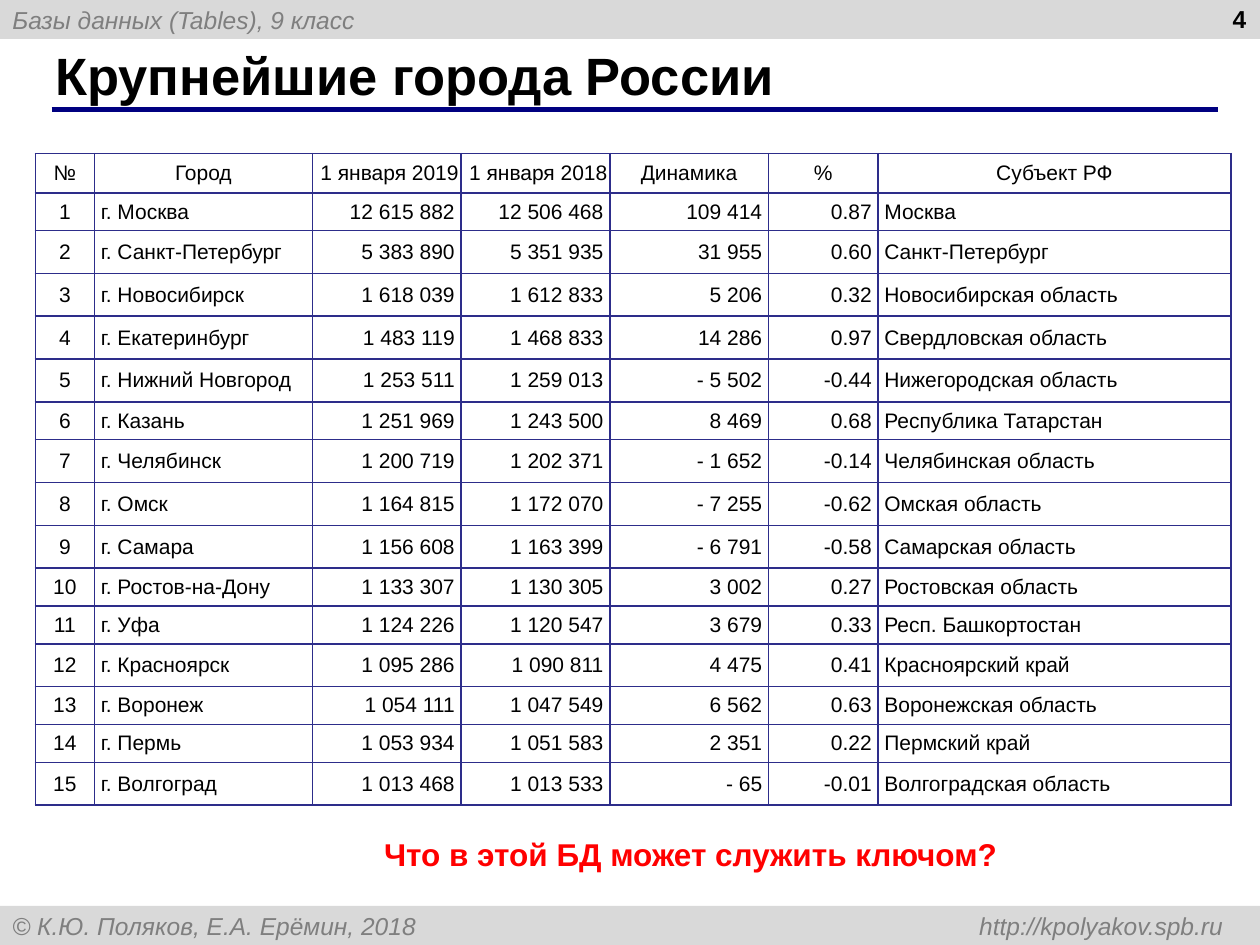
from lxml import etree
from pptx import Presentation
from pptx.dml.color import RGBColor
from pptx.enum.shapes import MSO_CONNECTOR, MSO_SHAPE
from pptx.enum.text import MSO_ANCHOR, PP_ALIGN
from pptx.oxml.ns import qn
from pptx.util import Inches, Pt

LEFT, CENTER, RIGHT = PP_ALIGN.LEFT, PP_ALIGN.CENTER, PP_ALIGN.RIGHT
TOP, MIDDLE = MSO_ANCHOR.TOP, MSO_ANCHOR.MIDDLE
RECTANGLE, STRAIGHT = MSO_SHAPE.RECTANGLE, MSO_CONNECTOR.STRAIGHT

FONT = "Arial"
BLACK, RED, NAVY = "000000", "FF0000", "000080"
BAND_FILL, BAND_TEXT, GRID = "D9D9D9", "7F7F7F", "2D2D8A"

COLUMN_WIDTHS = [0.47, 1.73, 1.18, 1.18, 1.26, 0.87, 2.8]
COLUMN_ALIGNMENTS = [CENTER, LEFT, RIGHT, RIGHT, RIGHT, RIGHT, LEFT]
HEADER_HEIGHT, SHORT_HEIGHT, TALL_HEIGHT = 0.31, 0.28, 0.34
SHORT_ROWS = {1, 6, 10, 11, 13, 14}
HEADERS = ["№", "Город", " 1 января 2019", " 1 января 2018 ", "Динамика", "%",
           "Субъект РФ"]
CITIES = [
    ["г. Москва", "12 615 882", "12 506 468", "109 414", "0.87", "Москва"],
    ["г. Санкт-Петербург", "5 383 890", "5 351 935", "31 955", "0.60", "Санкт-Петербург"],
    ["г. Новосибирск", "1 618 039", "1 612 833", "5 206", "0.32", "Новосибирская область"],
    ["г. Екатеринбург", "1 483 119", "1 468 833", "14 286", "0.97", "Свердловская область"],
    ["г. Нижний Новгород", "1 253 511", "1 259 013", "- 5 502", "-0.44",
     "Нижегородская область"],
    ["г. Казань", "1 251 969", "1 243 500", "8 469", "0.68", "Республика Татарстан"],
    ["г. Челябинск", "1 200 719", "1 202 371", "- 1 652", "-0.14", "Челябинская область"],
    ["г. Омск", "1 164 815", "1 172 070", "- 7 255", "-0.62", "Омская область"],
    ["г. Самара", "1 156 608", "1 163 399", "- 6 791", "-0.58", "Самарская область"],
    ["г. Ростов-на-Дону", "1 133 307", "1 130 305", "3 002", "0.27", "Ростовская область"],
    ["г. Уфа", "1 124 226", "1 120 547", "3 679", "0.33", "Респ. Башкортостан"],
    ["г. Красноярск", "1 095 286", "1 090 811", "4 475", "0.41", "Красноярский край"],
    ["г. Воронеж", "1 054 111", "1 047 549", "6 562", "0.63", "Воронежская область"],
    ["г. Пермь", "1 053 934", "1 051 583", "2 351", "0.22", "Пермский край"],
    ["г. Волгоград", "1 013 468", "1 013 533", "- 65", "-0.01", "Волгоградская область"],
]


def color(hex_value):
    return RGBColor.from_string(hex_value)


def write(text_frame, text, size, hex_value, bold=False, italic=False, align=LEFT):
    text_frame.text = text
    paragraph = text_frame.paragraphs[0]
    paragraph.alignment = align
    for run in paragraph.runs:
        font = run.font
        font.name, font.size = FONT, Pt(size)
        font.bold, font.italic = bold, italic
        font.color.rgb = color(hex_value)


def add_text(slide, box, text, size, hex_value, align=LEFT, anchor=TOP):
    shape = slide.shapes.add_textbox(*map(Inches, box))
    shape.text_frame.word_wrap = True
    shape.text_frame.vertical_anchor = anchor
    write(shape.text_frame, text, size, hex_value, bold=True, align=align)


def add_band(slide, box, text, tab=None):
    """Grey strip with an italic caption and an optional right tab stop."""
    shape = slide.shapes.add_shape(RECTANGLE, *map(Inches, box))
    shape.shadow.inherit = False
    shape.fill.solid()
    shape.fill.fore_color.rgb = color(BAND_FILL)
    shape.line.fill.background()
    shape.text_frame.vertical_anchor = MIDDLE
    write(shape.text_frame, text, 14, BAND_TEXT, italic=True)
    if tab:
        properties = shape.text_frame.paragraphs[0]._p.get_or_add_pPr()
        tabs = etree.SubElement(properties, qn("a:tabLst"))
        etree.SubElement(tabs, qn("a:tab"), pos=str(Inches(tab)), algn="r")


def add_heading(slide, box, text):
    """Slide title with the thick rule below it."""
    add_text(slide, box, text, 30, BLACK, anchor=MIDDLE)
    left, top, width, height = box
    rule_left, rule_top = left + 0.07, top + height + 0.02
    rule = slide.shapes.add_connector(
        STRAIGHT, Inches(rule_left), Inches(rule_top),
        Inches(rule_left + width + 0.1), Inches(rule_top))
    rule.line.color.rgb = color(NAVY)
    rule.line.width = Pt(3)
    etree.SubElement(rule._element.spPr, qn("a:effectLst"))


def add_borders(cell):
    properties = cell._tc.get_or_add_tcPr()
    for position, side in enumerate(("a:lnL", "a:lnR", "a:lnT", "a:lnB")):
        line = etree.Element(qn(side), w=str(Pt(1)))
        fill = etree.SubElement(line, qn("a:solidFill"))
        etree.SubElement(fill, qn("a:srgbClr"), val=GRID)
        properties.insert(position, line)


def add_city_table(slide, box):
    rows = [HEADERS] + [[str(number), *city] for number, city in enumerate(CITIES, 1)]
    table = slide.shapes.add_table(len(rows), len(HEADERS), *map(Inches, box)).table
    table.first_row = table.horz_banding = False
    for column, width in zip(table.columns, COLUMN_WIDTHS):
        column.width = Inches(width)
    for row_index, values in enumerate(rows):
        is_header = row_index == 0
        height = SHORT_HEIGHT if row_index in SHORT_ROWS else TALL_HEIGHT
        table.rows[row_index].height = Inches(HEADER_HEIGHT if is_header else height)
        margin = Inches(0.01 if is_header else 0.05)
        for column_index, value in enumerate(values):
            cell = table.cell(row_index, column_index)
            cell.margin_left = cell.margin_right = margin
            cell.margin_top = cell.margin_bottom = margin
            cell.vertical_anchor = MIDDLE
            cell.fill.background()
            align = CENTER if is_header else COLUMN_ALIGNMENTS[column_index]
            write(cell.text_frame, value, 12, BLACK, align=align)
            add_borders(cell)


def main():
    presentation = Presentation()
    presentation.slide_width, presentation.slide_height = Inches(10), Inches(7.5)
    slide = presentation.slides.add_slide(presentation.slide_layouts[6])

    # Header and footer strips
    add_band(slide, (0, 0, 10, 0.31), "Базы данных (Tables), 9 класс")
    add_band(slide, (0, 7.19, 10, 0.31),
             "© К.Ю. Поляков, Е.А. Ерёмин, 2018 \thttp://kpolyakov.spb.ru", tab=9.61)

    # Title and page number
    add_heading(slide, (0.34, 0.33, 9.16, 0.52), "Крупнейшие города России")
    add_text(slide, (7.66, -0.02, 2.33, 0.52), "4", 14, BLACK, align=RIGHT)

    # City table and the question below it
    add_city_table(slide, (0.28, 1.22, 9.49, 5.21))
    add_text(slide, (2.95, 6.58, 5.83, 0.4), "Что в этой БД может служить ключом?", 18, RED)

    presentation.save("out.pptx")


if __name__ == "__main__":
    main()
